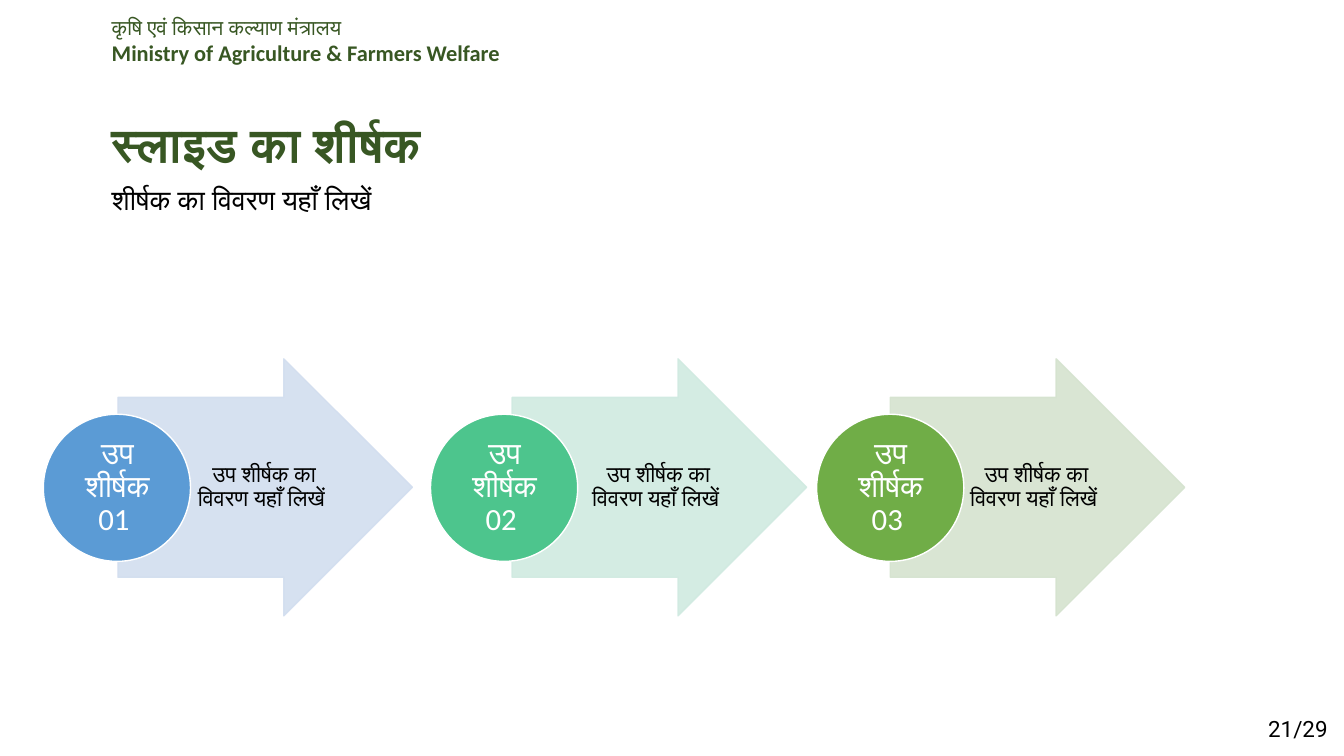
from lxml import etree
from pptx import Presentation
from pptx.dml.color import RGBColor
from pptx.enum.shapes import MSO_SHAPE
from pptx.enum.text import MSO_ANCHOR, PP_ALIGN
from pptx.oxml.ns import qn
from pptx.util import Inches, Pt

ARROW, CIRCLE = MSO_SHAPE.RIGHT_ARROW, MSO_SHAPE.OVAL
TOP, MIDDLE = MSO_ANCHOR.TOP, MSO_ANCHOR.MIDDLE
LEFT, CENTER = PP_ALIGN.LEFT, PP_ALIGN.CENTER

GREEN, BLACK, WHITE = "385723", "000000", "FFFFFF"
HEADING_FONT, BODY_FONT = "Roboto", "Calibri"


def color(value):
    return RGBColor.from_string(value)


class SlideBuilder:
    """Holds the current slide and the shared text and shape style."""

    def __init__(self, slide):
        self.slide = slide

    def text(self, place, lines, align=LEFT, anchor=TOP,
             insets=(0.1, 0.05, 0.1, 0.05), spacing=1.0):
        """Each line is (words, size, font, colour, bold)."""
        box = self.slide.shapes.add_textbox(*map(Inches, place))
        frame = box.text_frame
        frame.word_wrap = True
        frame.vertical_anchor = anchor
        (frame.margin_left, frame.margin_top,
         frame.margin_right, frame.margin_bottom) = map(Inches, insets)
        for number, (words, size, font, ink, bold) in enumerate(lines):
            para = frame.add_paragraph() if number else frame.paragraphs[0]
            para.alignment = align
            para.line_spacing = spacing
            span = para.add_run()
            span.text = words
            span.font.size = Pt(size)
            span.font.name = font
            span.font.bold = bold
            span.font.color.rgb = color(ink)

    def shape(self, kind, place, fill, line, opacity=100):
        shape = self.slide.shapes.add_shape(kind, *map(Inches, place))
        shape.shadow.inherit = False
        shape.fill.solid()
        shape.fill.fore_color.rgb = color(fill)
        shape.line.color.rgb = color(line)
        shape.line.width = Pt(1)
        if opacity < 100:
            for paint in shape.element.spPr.iter(qn("a:srgbClr")):
                alpha = etree.SubElement(paint, qn("a:alpha"))
                alpha.set("val", str(opacity * 1000))
        return shape

    def step(self, number, arrow_left, circle_left, tint, fill):
        """An arrow with its description, led by a numbered circle."""
        arrow = self.shape(ARROW, (arrow_left, 3.56, 2.92, 2.55),
                           tint, tint, opacity=90)
        arrow.adjustments[0] = 0.7
        arrow.adjustments[1] = 0.5
        self.text((arrow_left + 0.73, 3.94, 1.42, 1.79),
                  [("उप शीर्षक का विवरण यहाँ लिखें ", 16, BODY_FONT, BLACK, False)],
                  CENTER, MIDDLE, (0.04, 0.01, 0.02, 0.01), 0.9)
        self.shape(CIRCLE, (circle_left, 4.11, 1.46, 1.46), fill, WHITE)
        self.text((circle_left + 0.22, 4.32, 1.03, 1.03),
                  [(f"उप शीर्षक {number:02d} ", 22, BODY_FONT, WHITE, False)],
                  CENTER, MIDDLE, (0.02, 0.02, 0.02, 0.02), 0.9)


def main():
    deck = Presentation()
    deck.slide_width, deck.slide_height = Inches(13.33), Inches(7.5)
    page = SlideBuilder(deck.slides.add_slide(deck.slide_layouts[6]))

    # Page number and ministry name
    page.text((12.48, 7.05, 0.86, 0.37),
              [("21/29", 16, HEADING_FONT, BLACK, False)])
    page.text((1.01, 0.09, 6.09, 0.62), [
        ("कृषि एवं किसान कल्याण मंत्रालय", 15, HEADING_FONT, GREEN, False),
        ("Ministry of Agriculture & Farmers Welfare", 16, BODY_FONT, GREEN, True),
    ])

    # Title and its description
    page.text((1.01, 1.16, 6.13, 0.47),
              [("स्लाइड का शीर्षक", 34, HEADING_FONT, GREEN, True)], spacing=0.9)
    page.text((1.01, 1.8, 7.19, 0.37),
              [("शीर्षक का विवरण यहाँ लिखें", 20, BODY_FONT, BLACK, False)], spacing=0.9)

    # Three steps: arrow left, circle left, arrow tint, circle fill
    steps = [
        (1.17, 0.43, "D2DEEF", "5B9BD5"),
        (5.08, 4.27, "D0EAE1", "4DC58D"),
        (8.83, 8.1, "D5E3CF", "70AD47"),
    ]
    for number, step in enumerate(steps, start=1):
        page.step(number, *step)

    deck.save("out.pptx")


if __name__ == "__main__":
    main()
